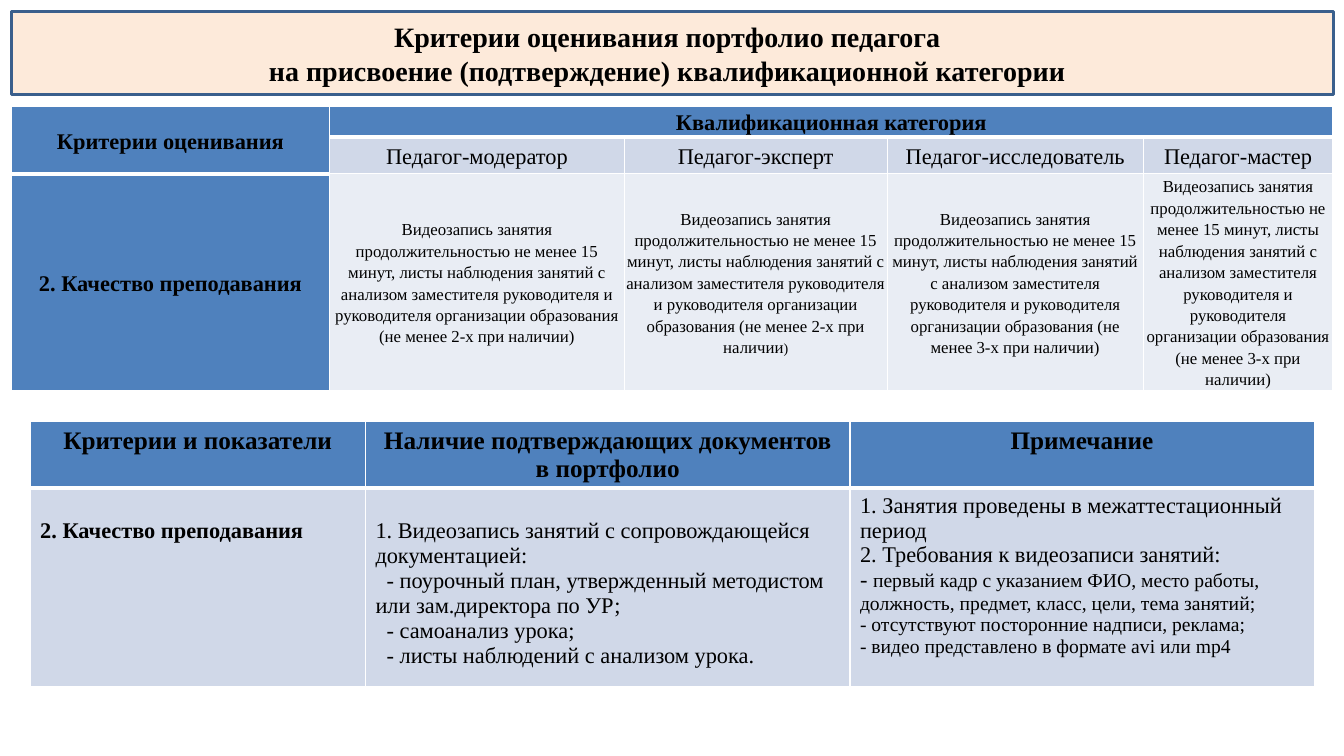
"""Builds a slide of portfolio assessment criteria with two tables."""
import pptx
import pptx.dml.color
import pptx.enum.text
import pptx.oxml.ns
import lxml.etree
from dataclasses import dataclass

Cm = pptx.util.Cm
Pt = pptx.util.Pt
qn = pptx.oxml.ns.qn
ALIGN = pptx.enum.text.PP_ALIGN
ANCHOR = pptx.enum.text.MSO_ANCHOR


@dataclass(frozen=True)
class Theme:
    font: str = "Times New Roman"
    text: str = "000000"
    banner: str = "FDEADA"
    banner_line: str = "3A5F8C"
    head: str = "4F81BD"
    band: str = "D0D8E8"
    pale: str = "E9EDF4"
    border: str = "FFFFFF"
    title: int = 20
    heading: int = 18
    body: int = 16
    note: int = 14
    small: int = 12
    tiny: int = 10


T = Theme()

TITLE = [
    "Критерии оценивания портфолио педагога",
    "на присвоение (подтверждение) квалификационной категории",
]
VIDEO = (
    "Видеозапись занятия продолжительностью не менее 15 минут, листы наблюдения "
    "занятий с анализом заместителя руководителя и руководителя организации "
    "образования (не менее {}-х при наличии"
)
CRITERION = "2. Качество преподавания"
CATEGORIES = [
    ("Педагог-модератор", 2, T.small),
    ("Педагог-эксперт", 2, T.tiny),
    ("Педагог-исследователь", 3, T.small),
    ("Педагог-мастер", 3, T.small),
]
DOC_HEADS = [
    "Критерии и показатели",
    "Наличие подтверждающих документов в портфолио",
    "Примечание",
]
DOC_LEAD = "1. Видеозапись занятий с сопровождающейся документацией:"
DOC_ITEMS = [
    "- поурочный план, утвержденный методистом или зам.директора по УР;",
    "- самоанализ урока;",
    "- листы наблюдений с анализом урока.",
]
NOTES = [
    [("1. Занятия проведены в межаттестационный период", T.body)],
    [("2. Требования к видеозаписи занятий:", T.body)],
    [
        ("- ", T.body),
        ("первый кадр с указанием ФИО, место работы, должность, предмет, класс, цели, тема занятий;", T.note),
    ],
    [("- отсутствуют посторонние надписи, реклама;", T.note)],
    [("- видео представлено в формате avi или mp4", T.note)],
]

GRADES = {
    "at": (0.28, 2.67),
    "cols": [8.03, 7.42, 6.63, 6.45, 4.78],
    "rows": [0.75, 0.93, 5.44],
}
DOCS = {"at": (0.76, 10.63), "cols": [8.45, 12.21, 11.7], "rows": [1.67, 4.99]}
TIGHT = dict.fromkeys(
    ("margin_left", "margin_right", "margin_top", "margin_bottom"), Cm(0.03)
)
GRADE_CELL = {**TIGHT, "vertical_anchor": ANCHOR.MIDDLE}
GRADE_PARA = {"alignment": ALIGN.CENTER, "line_spacing": 1.15, "space_after": Pt(1)}
CENTERED = {"alignment": ALIGN.CENTER}
LOWERED = {"margin_top": Cm(0.77)}


def apply(target, values):
    for name, value in values.items():
        setattr(target, name, value)


def rgb(value):
    return pptx.dml.color.RGBColor.from_string(value)


def write(tf, paragraphs, bold=False, para_format=None, indents=()):
    for i, runs in enumerate(paragraphs):
        p = tf.paragraphs[0] if i == 0 else tf.add_paragraph()
        apply(p, para_format or {})
        if i in indents:
            p._p.get_or_add_pPr().set("indent", str(Cm(0.28)))
        for text, size in runs:
            r = p.add_run()
            r.text = text
            apply(r.font, {"name": T.font, "size": Pt(size), "bold": bold})
            r.font.color.rgb = rgb(T.text)


def set_borders(cell, bottom):
    tc_pr = cell._tc.get_or_add_tcPr()
    for side, width in {"L": 1, "R": 1, "T": 1, "B": bottom}.items():
        ln = lxml.etree.SubElement(tc_pr, qn(f"a:ln{side}"), w=str(Pt(width)))
        fill = lxml.etree.SubElement(ln, qn("a:solidFill"))
        lxml.etree.SubElement(fill, qn("a:srgbClr"), val=T.border)


def add_grid(s, layout, fill_at, thick):
    cols, rows = layout["cols"], layout["rows"]
    left, top = layout["at"]
    box = [Cm(v) for v in (left, top, sum(cols), sum(rows))]
    table = s.shapes.add_table(len(rows), len(cols), *box).table
    for column, width in zip(table.columns, cols):
        column.width = Cm(width)
    for i, height in enumerate(rows):
        table.rows[i].height = Cm(height)
        for j in range(len(cols)):
            cell = table.cell(i, j)
            set_borders(cell, 3 if (i, j) in thick else 1)
            cell.fill.solid()
            cell.fill.fore_color.rgb = rgb(fill_at(i, j))
    return table


def add_title(s):
    sp = s.shapes.title
    apply(sp, {"left": Cm(0.28), "top": Cm(0.3), "width": Cm(33.32), "height": Cm(2.08)})
    geom = lxml.etree.SubElement(sp._element.spPr, qn("a:prstGeom"), prst="roundRect")
    lxml.etree.SubElement(geom, qn("a:avLst"))
    sp.fill.solid()
    sp.fill.fore_color.rgb = rgb(T.banner)
    sp.line.color.rgb = rgb(T.banner_line)
    sp.line.width = Pt(2)
    tf = sp.text_frame
    apply(tf, {
        "auto_size": pptx.enum.text.MSO_AUTO_SIZE.NONE,
        "vertical_anchor": ANCHOR.MIDDLE,
        "word_wrap": True,
        "margin_right": Cm(0.5),
    })
    write(tf, [[(line, T.title)] for line in TITLE], True, CENTERED)


def add_grades(s):
    def fill_at(i, j):
        return T.head if i == 0 or j == 0 else (T.band, T.pale)[i - 1]

    thick = [(0, j) for j in range(5)] + [(1, 0)]
    table = add_grid(s, GRADES, fill_at, thick)
    table.cell(0, 0).merge(table.cell(1, 0))
    table.cell(0, 1).merge(table.cell(0, 4))
    entries = [
        (0, 0, [("Критерии оценивания", T.body)]),
        (0, 1, [("Квалификационная категория", T.body)]),
        (2, 0, [(CRITERION, T.body)]),
    ]
    for j, (name, count, close) in enumerate(CATEGORIES, 1):
        entries.append((1, j, [(name, T.body)]))
        entries.append((2, j, [(VIDEO.format(count), T.small), (")", close)]))
    for i, j, runs in entries:
        cell = table.cell(i, j)
        apply(cell, GRADE_CELL)
        write(cell.text_frame, [runs], fill_at(i, j) == T.head, GRADE_PARA)


def add_docs(s):
    table = add_grid(
        s, DOCS, lambda i, j: (T.head, T.band)[i], [(0, j) for j in range(3)]
    )
    for j, head in enumerate(DOC_HEADS):
        write(table.cell(0, j).text_frame, [[(head, T.heading)]], True, CENTERED)
    criterion, documents, notes = (table.cell(1, j) for j in range(3))
    apply(criterion, LOWERED)
    apply(documents, LOWERED)
    write(criterion.text_frame, [[(CRITERION, T.body)]], True)
    lines = [[(line, T.body)] for line in [DOC_LEAD, *DOC_ITEMS]]
    write(documents.text_frame, lines, indents=range(1, len(lines)))
    write(notes.text_frame, NOTES)


def main():
    prs = pptx.Presentation()
    apply(prs, {"slide_width": Cm(33.87), "slide_height": Cm(19.05)})
    s = prs.slides.add_slide(prs.slide_layouts[5])
    add_title(s)
    add_grades(s)
    add_docs(s)
    prs.save("out.pptx")


if __name__ == "__main__":
    main()
